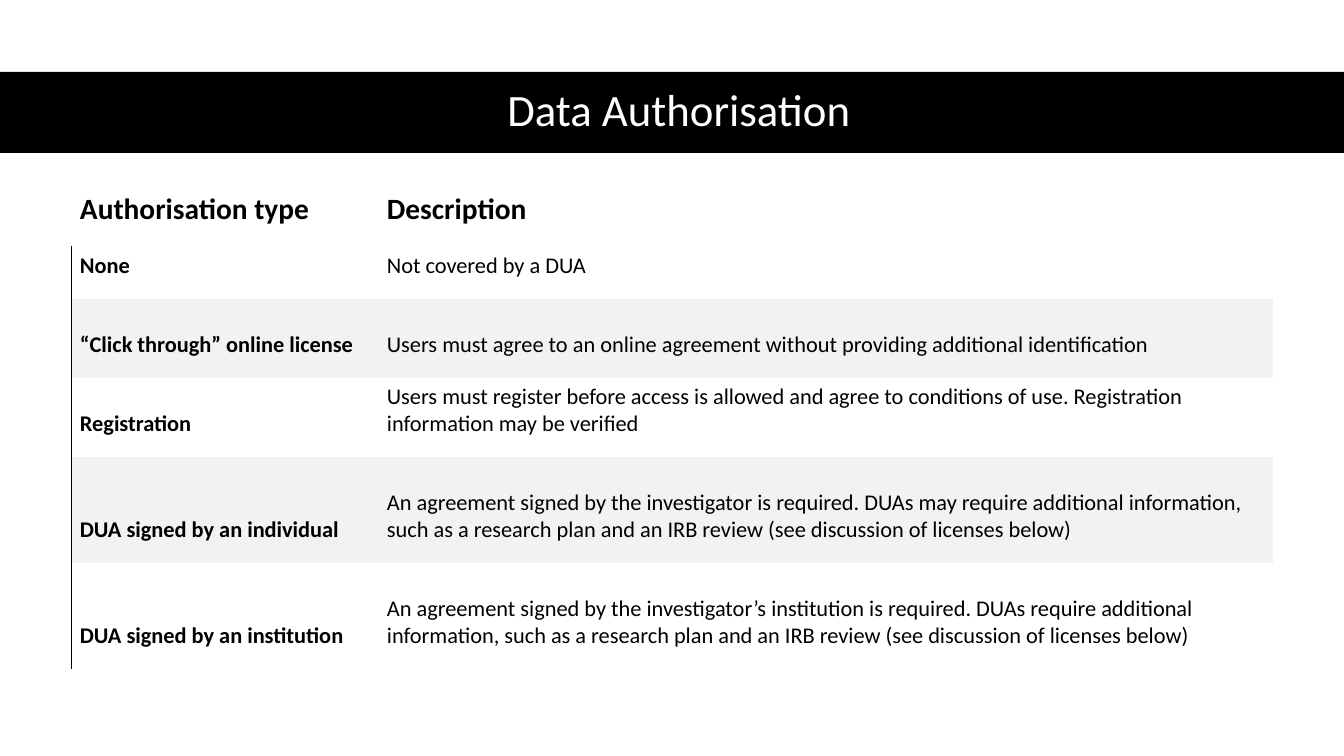
from dataclasses import dataclass

from lxml import etree
from pptx import Presentation
from pptx.dml.color import RGBColor
from pptx.enum.shapes import MSO_SHAPE
from pptx.enum.text import MSO_ANCHOR, PP_ALIGN
from pptx.oxml.ns import qn
from pptx.util import Pt

RECTANGLE = MSO_SHAPE.RECTANGLE
MIDDLE, BOTTOM = MSO_ANCHOR.MIDDLE, MSO_ANCHOR.BOTTOM
LEFT, CENTER = PP_ALIGN.LEFT, PP_ALIGN.CENTER
PLAIN_TABLE_STYLE = "{2D5ABB26-0587-4C30-8999-92F81FD0307C}"

TITLE = "Data Authorisation"
HEADINGS = ("Authorisation type", "Description")
AUTHORISATIONS = [
    ("None", "Not covered by a DUA"),
    ("“Click through” online license",
     "Users must agree to an online agreement without providing additional "
     "identification"),
    ("Registration",
     "Users must register before access is allowed and agree to conditions of use. "
     "Registration information may be verified"),
    ("DUA signed by an individual",
     "An agreement signed by the investigator is required. DUAs may require additional "
     "information, such as a research plan and an IRB review (see discussion of "
     "licenses below)"),
    ("DUA signed by an institution",
     "An agreement signed by the investigator’s institution is required. DUAs require "
     "additional information, such as a research plan and an IRB review (see discussion "
     "of licenses below)"),
]

# Lengths in px
SLIDE_SIZE = (1344, 756)
BAND = (0, 72, 1344, 81)
TITLE_BOX = (61, 71, 1236, 81)
TABLE_ORIGIN = (71, 186)
COLUMN_WIDTHS = (307, 895)
ROW_HEIGHTS = (60, 53, 79, 79, 106, 106)
CELL_MARGINS = (9, 3, 10, 19)
EMU_PER_PX = 914400 / 100.8


@dataclass(frozen=True)
class Theme:
    font: str = "Calibri"
    ink: str = "000000"
    title_ink: str = "FFFFFF"
    stripe: str = "F2F2F2"
    title_size: int = 32
    heading_size: int = 21
    body_size: int = 16
    rule_width: float = 0.75


THEME = Theme()


def px(*lengths):
    return [round(length * EMU_PER_PX) for length in lengths]


def write(frame, text, *, size, color=THEME.ink, bold=False, align=LEFT, spacing=1.0):
    paragraph = frame.paragraphs[0]
    paragraph.alignment = align
    paragraph.line_spacing = spacing
    run = paragraph.add_run()
    run.text = text
    run.font.name = THEME.font
    run.font.size = Pt(size)
    run.font.bold = bold
    run.font.color.rgb = RGBColor.from_string(color)


def rule_left(cell):
    """Draw a line along the left edge of a cell."""
    line = etree.Element(qn("a:lnL"), w=str(Pt(THEME.rule_width)))
    fill = etree.SubElement(line, qn("a:solidFill"))
    etree.SubElement(fill, qn("a:srgbClr"), val=THEME.ink)
    cell._tc.get_or_add_tcPr().insert(0, line)


def add_title(slide):
    band = slide.shapes.add_shape(RECTANGLE, *px(*BAND))
    band.shadow.inherit = False
    band.fill.solid()
    band.fill.fore_color.rgb = RGBColor.from_string(THEME.ink)
    band.line.fill.background()

    frame = slide.shapes.add_textbox(*px(*TITLE_BOX)).text_frame
    frame.word_wrap = True
    frame.vertical_anchor = MIDDLE
    write(frame, TITLE, size=THEME.title_size, color=THEME.title_ink,
          align=CENTER, spacing=0.9)


def add_authorisations(slide):
    rows = [HEADINGS, *AUTHORISATIONS]
    size = (sum(COLUMN_WIDTHS), sum(ROW_HEIGHTS))
    table = slide.shapes.add_table(
        len(rows), len(HEADINGS), *px(*TABLE_ORIGIN, *size)).table
    table.first_row = table.horz_banding = False
    table._tbl.tblPr.find(qn("a:tableStyleId")).text = PLAIN_TABLE_STYLE
    for column, width in zip(table.columns, px(*COLUMN_WIDTHS)):
        column.width = width
    for row, height in zip(table.rows, px(*ROW_HEIGHTS)):
        row.height = height

    for r, texts in enumerate(rows):
        heading = r == 0
        striped = r > 0 and r % 2 == 0
        for c, text in enumerate(texts):
            cell = table.cell(r, c)
            (cell.margin_left, cell.margin_top,
             cell.margin_right, cell.margin_bottom) = px(*CELL_MARGINS)
            cell.vertical_anchor = BOTTOM
            if striped:
                cell.fill.solid()
                cell.fill.fore_color.rgb = RGBColor.from_string(THEME.stripe)
            else:
                cell.fill.background()
            if c == 0 and not heading:
                rule_left(cell)
            write(cell.text_frame, text, bold=heading or c == 0,
                  size=THEME.heading_size if heading else THEME.body_size)


def main():
    deck = Presentation()
    deck.slide_width, deck.slide_height = px(*SLIDE_SIZE)
    slide = deck.slides.add_slide(deck.slide_layouts[6])
    add_title(slide)
    add_authorisations(slide)
    deck.save("out.pptx")


if __name__ == "__main__":
    main()
